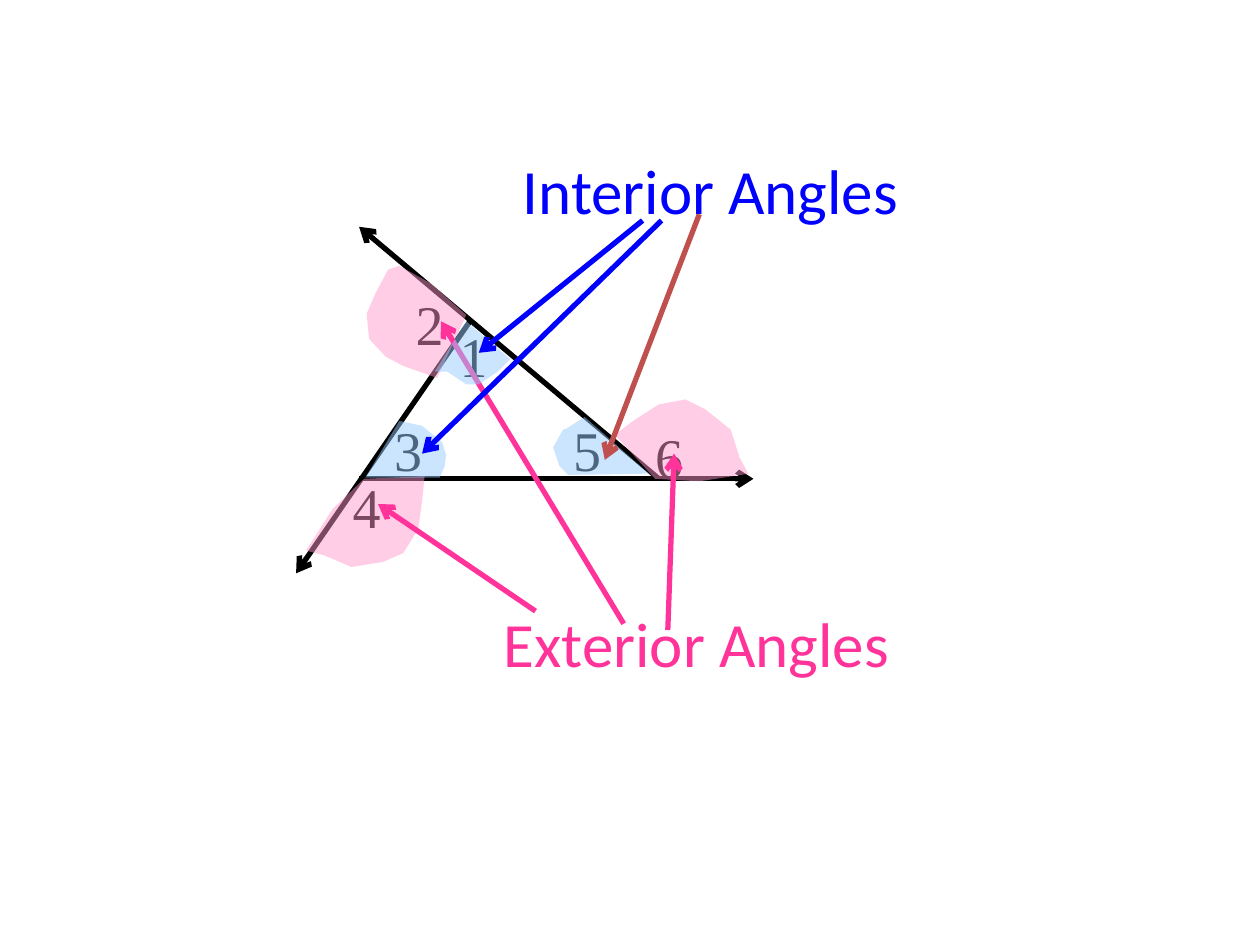
from pptx import Presentation, util as u
from pptx.dml.color import RGBColor
from pptx.enum import shapes
from pptx.oxml.ns import qn
from lxml import etree

PX = 9144  # 100 px to the inch
BLACK, PINK, BLUE, RED = "000000", "FF3399", "0000FF", "C0504D"
LIGHT_PINK, LIGHT_BLUE = "FF99CC", "99CCFF"

SIDES = [((288, 265), (50, 65)), ((50, 265), (363, 265)), ((138, 140), (0, 340))]
NUMBERS = {"1": (120, 135), "2": (85, 110), "3": (68, 210),
           "4": (35, 255), "5": (210, 210), "6": (275, 215)}

EXTERIOR_SECTORS = [
    [(107, 110), (135, 135), (112, 185), (84, 175), (71, 168),
     (58, 154), (56, 134), (63, 118), (73, 99), (82, 96)],
    [(29, 289), (54, 265), (102, 263), (100, 283), (97, 305),
     (85, 324), (69, 331), (44, 335), (23, 326), (8, 322)],
    [(320, 267), (285, 265), (253, 230), (269, 218), (288, 206),
     (309, 202), (325, 210), (345, 226), (352, 248), (359, 261)],
]
EXTERIOR_ARROWS = [((295, 385), (300, 245), PINK), ((190, 370), (65, 285), PINK),
                   ((260, 380), (115, 140), PINK)]

INTERIOR_SECTORS = [
    [(110, 180), (135, 140), (170, 170), (160, 180), (145, 190), (135, 190), (120, 180)],
    [(229, 216), (280, 261), (216, 262), (209, 255), (204, 240), (212, 226), (215, 225)],
    [(82, 219), (55, 264), (114, 264), (118, 255), (119, 246), (116, 236), (100, 223)],
]
INTERIOR_ARROWS = [((275, 60), (145, 165), BLUE), ((290, 60), (100, 245), BLUE),
                   ((320, 55), (245, 250), RED)]


def rgb(color):
    return RGBColor.from_string(color)


def place(box, point):
    """Turn a point inside the box into slide EMU."""
    return [(o + v) * PX for o, v in zip(box, point)]


def add_arrow(parent, box, start, end, color):
    sp = parent.add_connector(shapes.MSO_CONNECTOR.STRAIGHT,
                              *place(box, start), *place(box, end))
    sp.line.color.rgb = rgb(color)
    sp.line.width = u.Pt(3)
    ln = sp.line._get_or_add_ln()
    etree.SubElement(ln, qn("a:tailEnd"), type="arrow")
    etree.SubElement(sp._element.spPr, qn("a:effectLst"))


def add_text(parent, box, point, size, words, font, points, color):
    w, h = size
    sp = parent.add_textbox(*place(box, point), w * PX, h * PX)
    tf = sp.text_frame
    tf.word_wrap = True
    p = tf.paragraphs[0]
    p.text = words
    p.font.name, p.font.size = font, u.Pt(points)
    p.font.color.rgb = rgb(color)


def add_sector(parent, box, points, color, opacity):
    start, *rest = [place(box, point) for point in points]
    builder = parent.build_freeform(*start)
    builder.add_line_segments(rest, close=True)
    sp = builder.convert_to_shape()
    sp.shadow.inherit = False
    sp.fill.solid()
    sp.fill.fore_color.rgb = rgb(color)
    sp.line.fill.background()
    clr = sp._element.spPr.find(".//" + qn("a:srgbClr"))
    etree.SubElement(clr, qn("a:alpha"), val=str(opacity * 1000))


def add_triangle(s, box):
    group = s.shapes.add_group_shape().shapes
    for start, end in SIDES:
        add_arrow(group, box, start, end, BLACK)
    for number, point in NUMBERS.items():
        add_text(group, box, point, (38, 38), number, "Times New Roman", 32, BLACK)


def add_angles(s, box, sectors, fill, opacity, arrows, label, label_at, color):
    """Shade one kind of angle and point its label at each of them."""
    group = s.shapes.add_group_shape().shapes
    for points in sectors:
        add_sector(group, box, points, fill, opacity)
    for start, end, arrow_color in arrows:
        add_arrow(s.shapes, box, start, end, arrow_color)
    add_text(s.shapes, box, label_at, (370, 70), label, "Calibri", 36, color)


def main():
    prs = Presentation()
    prs.slide_width, prs.slide_height = 1000 * PX, 750 * PX
    s = prs.slides.add_slide(prs.slide_layouts[6])
    box = (235, 115)
    add_triangle(s, box)
    add_angles(s, box, EXTERIOR_SECTORS, LIGHT_PINK, 48, EXTERIOR_ARROWS,
               "Exterior Angles", (155, 360), PINK)
    add_angles(s, box, INTERIOR_SECTORS, LIGHT_BLUE, 50, INTERIOR_ARROWS,
               "Interior Angles", (170, 0), BLUE)
    prs.save("out.pptx")


if __name__ == "__main__":
    main()
